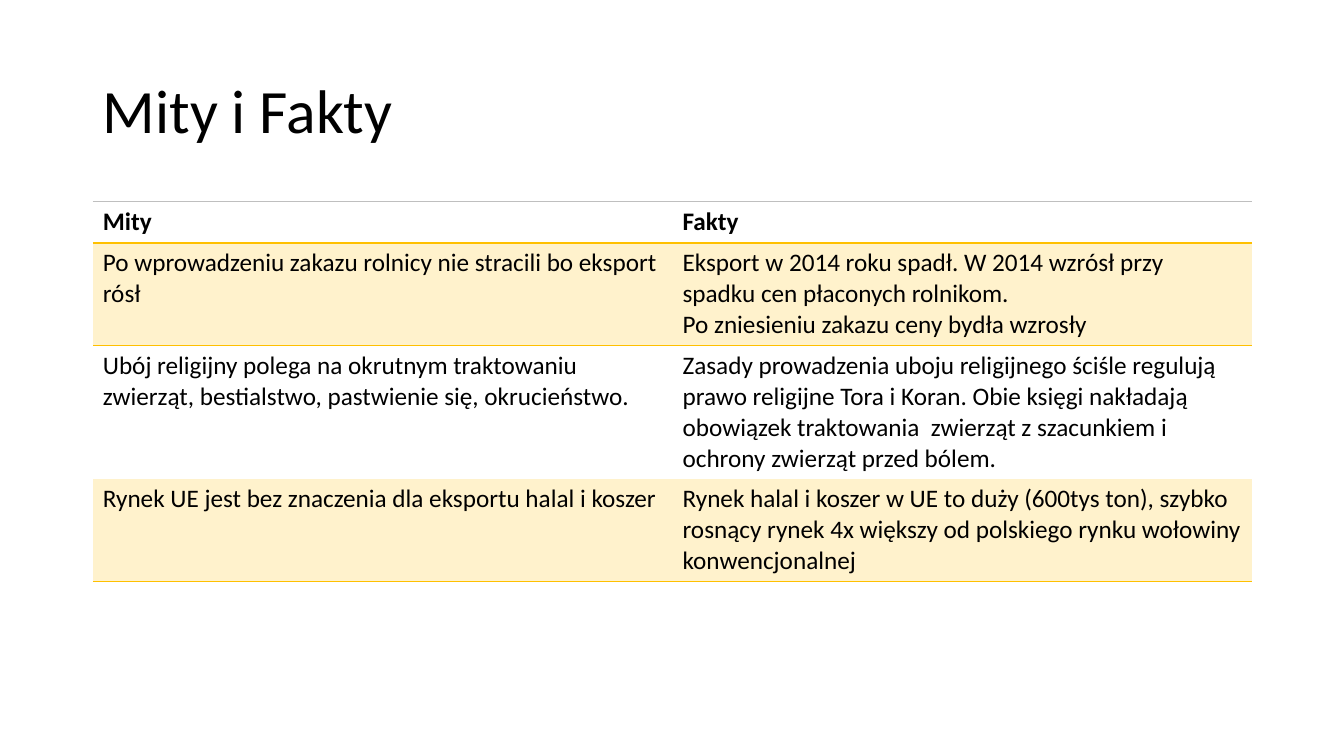
from lxml.etree import SubElement
from pptx import Presentation
from pptx.dml.color import RGBColor
from pptx.enum.text import MSO_ANCHOR
from pptx.oxml.ns import qn
from pptx.util import Inches, Pt

# Content
TITLE = "Mity i Fakty"
ROWS = [
    ("Mity", "Fakty"),
    ("Po wprowadzeniu zakazu rolnicy nie stracili bo eksport rósł",
     "Eksport w 2014 roku spadł. W 2014 wzrósł przy spadku cen płaconych rolnikom.\n"
     "Po zniesieniu zakazu ceny bydła wzrosły"),
    ("Ubój religijny polega na okrutnym traktowaniu zwierząt, bestialstwo, "
     "pastwienie się, okrucieństwo.",
     "Zasady prowadzenia uboju religijnego ściśle regulują prawo religijne Tora i Koran. "
     "Obie księgi nakładają obowiązek traktowania  zwierząt z szacunkiem i ochrony "
     "zwierząt przed bólem."),
    ("Rynek UE jest bez znaczenia dla eksportu halal i koszer",
     "Rynek halal i koszer w UE to duży (600tys ton), szybko rosnący rynek 4x większy "
     "od polskiego rynku wołowiny konwencjonalnej"),
]
HEIGHTS = (0.41, 1.02, 1.32, 1.02)

# Format
BLACK = RGBColor(0, 0, 0)
GOLD = RGBColor(0xFF, 0xC0, 0x00)
CREAM = RGBColor(0xFF, 0xF2, 0xCC)
GREY = RGBColor(0xBF, 0xBF, 0xBF)
HEAD = {"name": "Calibri", "size": Pt(44), "bold": False}
BODY = {"name": "Calibri", "size": Pt(18), "bold": False}
PLAIN = "{2D5ABB26-0587-4C30-8999-92F81FD0307C}"  # no style, no grid
LEFT, WIDTH = 0.92, 11.5
LAST = len(ROWS) - 1
EDGES = {0: (("a:lnT", GREY), ("a:lnB", GOLD)),
         1: (("a:lnT", GOLD),),
         LAST: (("a:lnB", GOLD),)}


def write(frame, text, form):
    frame.text = text
    for para in frame.paragraphs:
        for run in para.runs:
            for key, value in form.items():
                setattr(run.font, key, value)
            run.font.color.rgb = BLACK


def rule(cell, side, color):
    line = SubElement(cell._tc.get_or_add_tcPr(), qn(side), w=str(Pt(1)))
    fill = SubElement(line, qn("a:solidFill"))
    SubElement(fill, qn("a:srgbClr"), val=str(color))


def main():
    deck = Presentation()
    deck.slide_width, deck.slide_height = Inches(13.33), Inches(7.5)
    slide = deck.slides.add_slide(deck.slide_layouts[6])

    # Title
    box = slide.shapes.add_textbox(
        Inches(LEFT), Inches(0.4), Inches(WIDTH), Inches(1.45))
    frame = box.text_frame
    frame.word_wrap = True
    frame.vertical_anchor = MSO_ANCHOR.MIDDLE
    write(frame, TITLE, HEAD)
    frame.paragraphs[0].line_spacing = 0.9

    # Table
    table = slide.shapes.add_table(
        len(ROWS), 2, Inches(LEFT), Inches(2), Inches(WIDTH),
        Inches(sum(HEIGHTS))).table
    table._tbl.tblPr.find(qn("a:tableStyleId")).text = PLAIN
    table.horz_banding = False
    for i, texts in enumerate(ROWS):
        table.rows[i].height = Inches(HEIGHTS[i])
        for j, text in enumerate(texts):
            cell = table.cell(i, j)
            write(cell.text_frame, text, {**BODY, "bold": i == 0})
            for side, color in EDGES.get(i, ()):
                rule(cell, side, color)
            if i % 2:
                cell.fill.solid()
                cell.fill.fore_color.rgb = CREAM
            else:
                cell.fill.background()

    deck.save("out.pptx")


if __name__ == "__main__":
    main()
